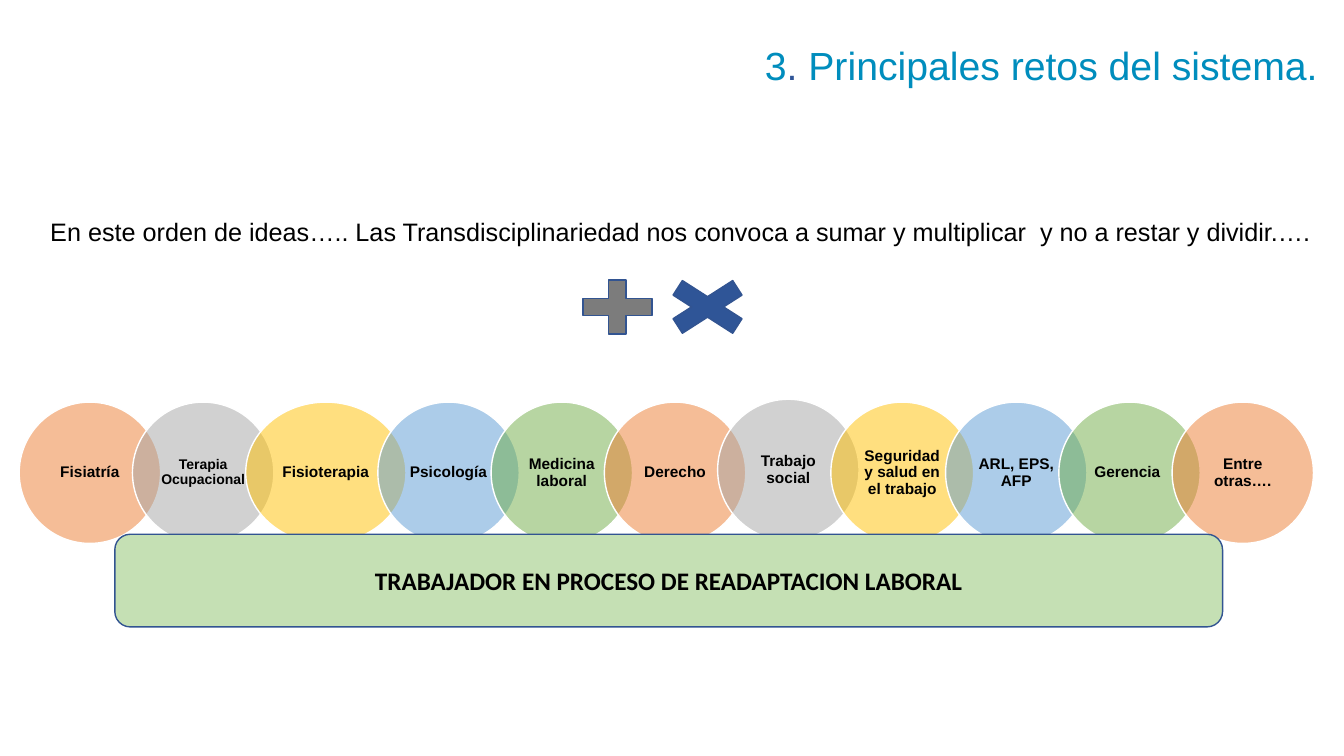
from pptx import Presentation
from pptx.dml.color import RGBColor
from pptx.enum.shapes import MSO_SHAPE
from pptx.enum.text import MSO_ANCHOR, MSO_AUTO_SIZE, PP_ALIGN
from pptx.oxml.ns import qn
from pptx.util import Pt
from lxml.etree import SubElement

OUTLINE = "325491"
ACCENTS = ["ED7D31", "A5A5A5", "FFC000", "5B9BD5", "70AD47"]
DIAMETER, OVERLAP, INSCRIBED = 101, 20.1, 0.707
DISCIPLINES = [
    ("Fisiatría", {}),
    ("Terapia Ocupacional", {"size": 10}),
    ("Fisioterapia", {"width": 114.5}),
    ("Psicología", {}),
    ("Medicina laboral", {}),
    ("Derecho", {}),
    ("Trabajo social", {"rise": 2}),
    ("Seguridad y salud en el trabajo", {"width": 102}),
    ("ARL, EPS, AFP", {}),
    ("Gerencia ", {}),
    ("Entre otras….", {}),
]


def colour(hex_code):
    """Turn a hex string into a colour."""
    return RGBColor.from_string(hex_code)


def apply(target, values):
    """Set every format value on the target."""
    for name, value in values.items():
        setattr(target, name, value)


def add_figure(slide, kind, box, fill, line, alpha=None):
    """Draw a filled, outlined preset shape in the box."""
    figure = slide.shapes.add_shape(kind, *map(Pt, box))
    figure.shadow.inherit = False
    figure.fill.solid()
    figure.fill.fore_color.rgb = colour(fill)
    figure.line.color.rgb = colour(line)
    figure.line.width = Pt(1)
    if alpha:
        tint = figure.fill._xPr.find(qn("a:solidFill"))[0]
        SubElement(tint, qn("a:alpha"), val=str(alpha * 1000))
    return figure


def write(frame, runs, font, frame_format, paragraph_format):
    """Write coloured runs as the one paragraph of a text frame."""
    apply(frame, frame_format)
    paragraph = frame.paragraphs[0]
    apply(paragraph, paragraph_format)
    for words, hex_code in runs:
        run = paragraph.add_run()
        run.text = words
        apply(run.font, font)
        run.font.color.rgb = colour(hex_code)


def add_label(slide, box, *text):
    """Place a text box in the box and write in it."""
    write(slide.shapes.add_textbox(*map(Pt, box)).text_frame, *text)


def add_title(slide, box):
    """Place the slide title."""
    runs = [("3", "008DBD"), (". ", "2F5597"),
            ("Principales retos del sistema.", "008DBD")]
    add_label(slide, box, runs, {"name": "Arial", "size": Pt(28)},
              {"word_wrap": False, "auto_size": MSO_AUTO_SIZE.SHAPE_TO_FIT_TEXT}, {})


def add_idea(slide, box):
    """Place the sentence and the plus and times signs below it."""
    left, top, width, height = box
    sentence = ("En este orden de ideas….. Las Transdisciplinariedad nos convoca a sumar "
                "y multiplicar  y no a restar y dividir.….")
    add_label(slide, (left, top, width, 29), [(sentence, "000000")],
              {"name": "Arial", "size": Pt(18)},
              {"word_wrap": True, "auto_size": MSO_AUTO_SIZE.SHAPE_TO_FIT_TEXT},
              {"alignment": PP_ALIGN.JUSTIFY})
    sign_height = 52.5
    sign_top = top + height - sign_height
    for kind, offset, sign_width, fill in [
        (MSO_SHAPE.MATH_PLUS, 378.7, 67, "7C7C7C"),
        (MSO_SHAPE.MATH_MULTIPLY, 435.6, 82, "2F5597"),
    ]:
        add_figure(slide, kind, (left + offset, sign_top, sign_width, sign_height),
                   fill, OUTLINE)


def add_disciplines(slide, left, top):
    """Chain the overlapping discipline circles from left to right."""
    for index, (discipline, changes) in enumerate(DISCIPLINES):
        width = changes.get("width", DIAMETER)
        size = changes.get("size", 11)
        circle_top = top - changes.get("rise", 0)
        add_figure(slide, MSO_SHAPE.OVAL, (left, circle_top, width, DIAMETER),
                   ACCENTS[index % len(ACCENTS)], "FFFFFF", alpha=50)
        margin = (1 - INSCRIBED) / 2
        inner = (left + width * margin, circle_top + DIAMETER * margin,
                 width * INSCRIBED, DIAMETER * INSCRIBED)
        add_label(slide, inner, [(discipline, "000000")],
                  {"name": "Arial", "size": Pt(size), "bold": True},
                  {"word_wrap": True, "vertical_anchor": MSO_ANCHOR.MIDDLE,
                   "margin_left": Pt(5.6), "margin_right": Pt(5.6),
                   "margin_top": Pt(1.1), "margin_bottom": Pt(1.1)},
                  {"alignment": PP_ALIGN.CENTER, "line_spacing": 0.9})
        left += width - OVERLAP


def add_worker(slide, box):
    """Place the bar that names the worker."""
    bar = add_figure(slide, MSO_SHAPE.FLOWCHART_ALTERNATE_PROCESS, box, "C5E0B4", OUTLINE)
    write(bar.text_frame, [("TRABAJADOR EN PROCESO DE READAPTACION LABORAL", "000000")],
          {"name": "Calibri", "size": Pt(18), "bold": True},
          {"word_wrap": True, "vertical_anchor": MSO_ANCHOR.MIDDLE},
          {"alignment": PP_ALIGN.CENTER})


def main():
    """Build and save the slide."""
    deck = Presentation()
    apply(deck, {"slide_width": Pt(960), "slide_height": Pt(540)})
    slide = deck.slides.add_slide(deck.slide_layouts[6])
    add_idea(slide, (28.8, 151.2, 924, 94.3))
    add_disciplines(slide, 13.7, 287.2)
    add_worker(slide, (82, 381.6, 791.3, 66.2))
    add_title(slide, (539.3, 26, 412.6, 41))
    deck.save("out.pptx")


if __name__ == "__main__":
    main()
